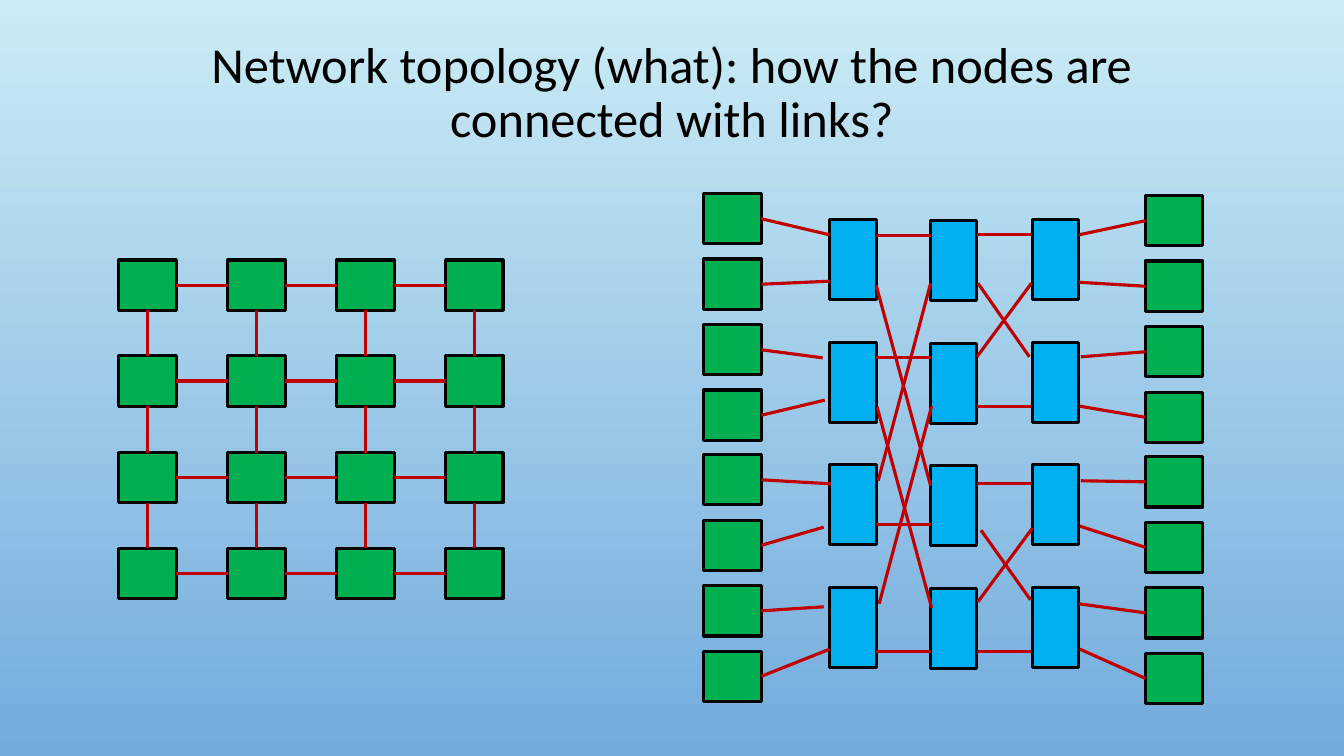
import lxml.etree
import pptx
import pptx.dml.color
import pptx.enum.shapes
import pptx.enum.text
import pptx.oxml.ns
import pptx.util

EMU_PER_PX = 9144
COLORS = {
    "sky_top": "CBECF5", "sky_bottom": "73ABDD", "text": "000000",
    "node": "00B050", "switch": "00B0F0", "border": "000000", "link": "C00000",
}
NODE_W, NODE_H = 57, 50
SWITCH_W, SWITCH_H = 46, 79
TOP, LEFT, BOTTOM, RIGHT = range(4)

LEFT_ENDS = [(125, 41), (125, 87), (118, 163), (120, 205),
             (126, 288), (119, 331), (119, 410), (125, 452)]
RIGHT_ENDS = [(372, 41), (372, 88), (374, 162), (373, 211),
              (374, 285), (373, 330), (372, 407), (373, 452)]
STRAIGHT_LINKS = [(171, 225, (42, 163, 328, 454)), (271, 325, (41, 211, 288, 454))]
CROSSED_LINKS = [
    (171, 91, 225, 290), (172, 212, 226, 411),
    (173, 285, 225, 89), (174, 407, 226, 211),
    (271, 162, 325, 89), (272, 405, 326, 332),
    (272, 89, 323, 162), (275, 334, 324, 403),
]


def px(n):
    return pptx.util.Emu(n * EMU_PER_PX)


def rgb(name):
    return pptx.dml.color.RGBColor.from_string(COLORS[name])


def spread(start, span, count):
    return [start + round(i * span / (count - 1)) for i in range(count)]


def add_block(slide, x, y, w, h, color):
    sp = slide.shapes.add_shape(
        pptx.enum.shapes.MSO_SHAPE.RECTANGLE, px(x), px(y), px(w), px(h))
    sp.shadow.inherit = False
    sp.fill.solid()
    sp.fill.fore_color.rgb = rgb(color)
    sp.line.color.rgb = rgb("border")
    sp.line.width = pptx.util.Pt(2.25)
    return sp


def add_link(slide, x1=0, y1=0, x2=0, y2=0, begin=None, end=None):
    cxn = slide.shapes.add_connector(
        pptx.enum.shapes.MSO_CONNECTOR.STRAIGHT, px(x1), px(y1), px(x2), px(y2))
    if begin:
        cxn.begin_connect(*begin)
    if end:
        cxn.end_connect(*end)
    cxn.line.color.rgb = rgb("link")
    cxn.line.width = pptx.util.Pt(2.25)
    lxml.etree.SubElement(cxn._element.spPr, pptx.oxml.ns.qn("a:effectLst"))


def add_background(slide):
    fill = slide.background.fill
    fill.gradient()
    fill.gradient_angle = 270
    for stop, position, color in zip(
            fill.gradient_stops, (0, 1), ("sky_top", "sky_bottom")):
        stop.position = position
        stop.color.rgb = rgb(color)


def add_title(slide, x, y, w, h, text):
    tf = slide.shapes.add_textbox(px(x), px(y), px(w), px(h)).text_frame
    tf.word_wrap = True
    tf.vertical_anchor = pptx.enum.text.MSO_ANCHOR.MIDDLE
    p = tf.paragraphs[0]
    p.text = text
    p.alignment = pptx.enum.text.PP_ALIGN.CENTER
    p.line_spacing = 0.9
    p.font.size = pptx.util.Pt(36)
    p.font.name = "Calibri"
    p.font.color.rgb = rgb("text")


def add_mesh(slide, x, y, w, h, size=4):
    nodes = [[add_block(slide, nx, ny, NODE_W, NODE_H, "node")
              for nx in spread(x, w - NODE_W, size)]
             for ny in spread(y, h - NODE_H, size)]
    for row in nodes:
        for a, b in zip(row, row[1:]):
            add_link(slide, begin=(a, RIGHT), end=(b, LEFT))
    for column in zip(*nodes):
        for a, b in zip(column, column[1:]):
            add_link(slide, begin=(a, BOTTOM), end=(b, TOP))


def add_butterfly(slide, x, y, w, h):
    for dx, dy in ((125, 26), (225, 27), (326, 26)):
        for sy in spread(y + dy, 365, 4):
            add_block(slide, x + dx, sy, SWITCH_W, SWITCH_H, "switch")

    sides = ((x, y, RIGHT, LEFT_ENDS), (x + w - NODE_W, y + 2, LEFT, RIGHT_ENDS))
    for nx, top, side, ends in sides:
        rows = spread(top, h - 2 - NODE_H, len(ends))
        for ny, (dx, dy) in zip(rows, ends):
            node = add_block(slide, nx, ny, NODE_W, NODE_H, "node")
            add_link(slide, x2=x + dx, y2=y + dy, begin=(node, side))

    straight = [(x1, dy, x2, dy) for x1, x2, rows in STRAIGHT_LINKS for dy in rows]
    for x1, y1, x2, y2 in straight + CROSSED_LINKS:
        add_link(slide, x + x1, y + y1, x + x2, y + y2)


def main():
    prs = pptx.Presentation()
    prs.slide_width, prs.slide_height = px(1333), px(750)
    slide = prs.slides.add_slide(prs.slide_layouts[6])
    add_background(slide)
    add_title(slide, 100, 32, 1133, 123,
              "Network topology (what): how the nodes are connected with links?")
    add_mesh(slide, 118, 258, 381, 336)
    add_butterfly(slide, 698, 192, 495, 506)
    prs.save("out.pptx")


if __name__ == "__main__":
    main()
